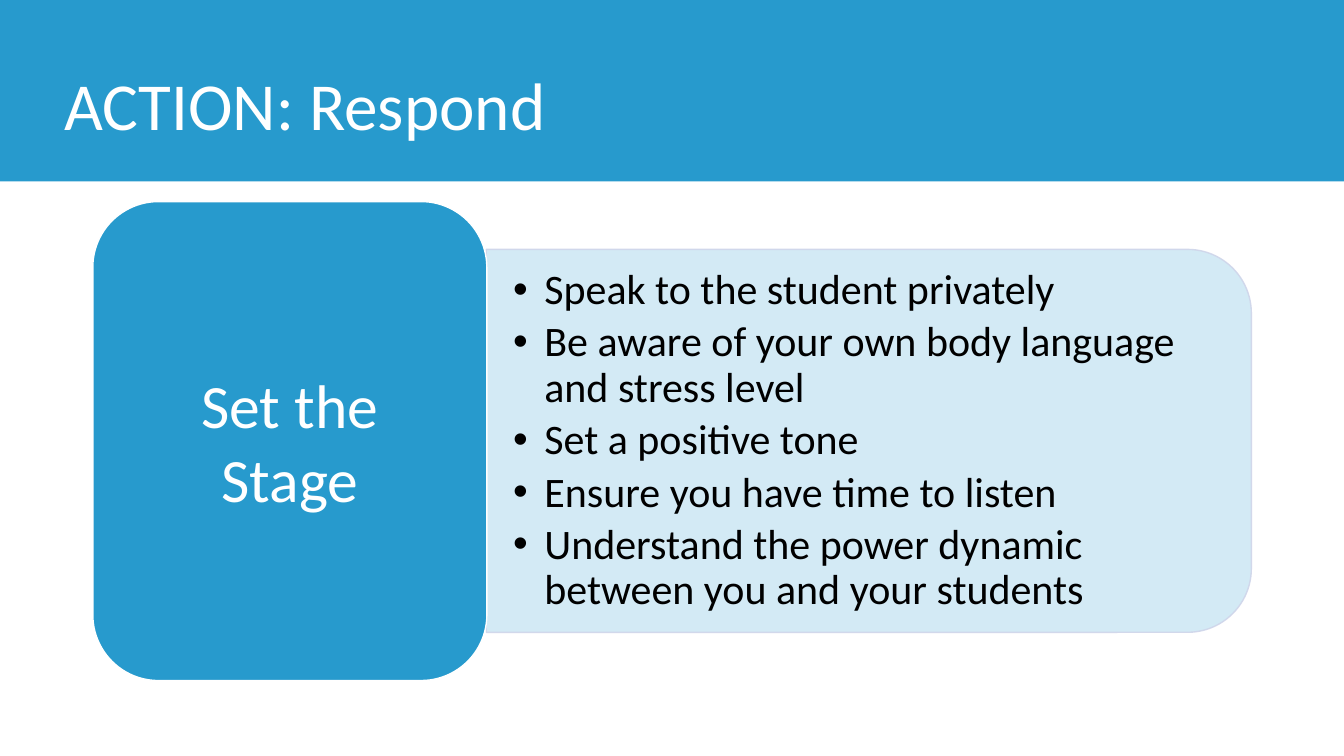
from lxml import etree
from pptx import Presentation
from pptx.dml.color import RGBColor
from pptx.enum.shapes import MSO_SHAPE
from pptx.enum.text import MSO_ANCHOR, PP_ALIGN
from pptx.oxml.ns import qn
from pptx.util import Cm, Pt

RECTANGLE = MSO_SHAPE.RECTANGLE
ROUNDED = MSO_SHAPE.ROUNDED_RECTANGLE
TWO_ROUNDED = MSO_SHAPE.ROUND_2_SAME_RECTANGLE
MIDDLE = MSO_ANCHOR.MIDDLE
LEFT, CENTER = PP_ALIGN.LEFT, PP_ALIGN.CENTER

BLUE = RGBColor(0x27, 0x9A, 0xCD)
PALE_LINE = RGBColor(0xCF, 0xD5, 0xEA)
WHITE = RGBColor(0xFF, 0xFF, 0xFF)
BLACK = RGBColor(0x00, 0x00, 0x00)

STEPS = [
    "Speak to the student privately",
    "Be aware of your own body language and stress level",
    "Set a positive tone",
    "Ensure you have time to listen",
    "Understand the power dynamic between you and your students",
]

deck = Presentation()
deck.slide_width, deck.slide_height = Cm(33.87), Cm(19.05)
page = deck.slides.add_slide(deck.slide_layouts[6])


def add_block(kind, left, top, width, height, line_color=None):
    block = page.shapes.add_shape(kind, Cm(left), Cm(top), Cm(width), Cm(height))
    block.shadow.inherit = False
    block.fill.solid()
    block.fill.fore_color.rgb = BLUE
    if line_color is None:
        block.line.fill.background()
    else:
        block.line.color.rgb = line_color
        block.line.width = Pt(1)
    return block


def add_span(para, text, size, color, align=LEFT):
    para.alignment = align
    span = para.add_run()
    span.text = text
    span.font.name = "Calibri"
    span.font.size = Pt(size)
    span.font.color.rgb = color


# Title band
add_block(RECTANGLE, 0, 0, 33.87, 4.57)
title_box = page.shapes.add_textbox(Cm(1.37), Cm(0.97), Cm(29.97), Cm(3.56))
title_frame = title_box.text_frame
title_frame.word_wrap = True
title_frame.vertical_anchor = MIDDLE
title_para = title_frame.paragraphs[0]
title_para.line_spacing = 0.9
add_span(title_para, "ACTION: Respond", 48, WHITE)

# Pale panel, turned so that its rounded end faces right
panel = add_block(TWO_ROUNDED, 17.07, 1.47, 9.65, 19.28, PALE_LINE)
panel.rotation = 90
for color, opacity in ((panel.fill.fore_color, 20), (panel.line.color, 90)):
    color_element = color._xFill.find(qn("a:srgbClr"))
    etree.SubElement(color_element, qn("a:alpha"), val=str(opacity * 1000))

# Bulleted steps on the panel
steps_box = page.shapes.add_textbox(Cm(12.24), Cm(6.76), Cm(18.82), Cm(8.71))
steps_frame = steps_box.text_frame
steps_frame.word_wrap = True
steps_frame.vertical_anchor = MIDDLE
steps_frame.margin_left = steps_frame.margin_right = Cm(0.69)
steps_frame.margin_top = steps_frame.margin_bottom = Cm(0.36)
for index, step in enumerate(STEPS):
    para = steps_frame.paragraphs[0] if index == 0 else steps_frame.add_paragraph()
    properties = para._p.get_or_add_pPr()
    properties.set("marL", str(Cm(0.79)))
    properties.set("indent", str(-Cm(0.79)))
    etree.SubElement(properties, qn("a:buFont"), typeface="Arial")
    etree.SubElement(properties, qn("a:buChar"), char="•")
    para.line_spacing = 0.9
    para.space_after = Pt(5)
    add_span(para, step, 30, BLACK)

# Heading card
card = add_block(ROUNDED, 2.34, 5.08, 9.93, 12.07, WHITE)
card_frame = card.text_frame
card_frame.word_wrap = True
card_frame.vertical_anchor = MIDDLE
card_frame.margin_left = card_frame.margin_right = Cm(0.46)
card_frame.margin_top = card_frame.margin_bottom = Cm(0.23)
add_span(card_frame.paragraphs[0], "Set the Stage", 44, WHITE, CENTER)

deck.save("out.pptx")
